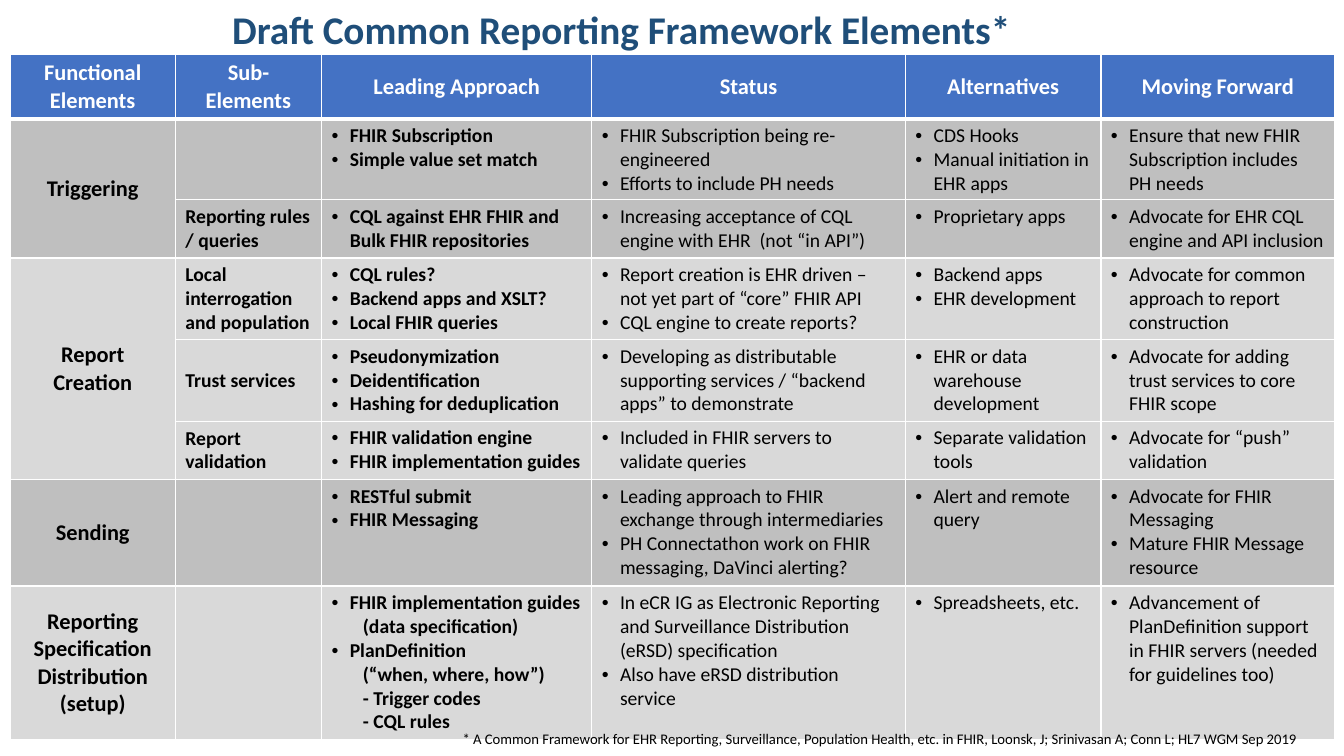
from lxml import etree
from pptx import Presentation
from pptx.dml.color import RGBColor
from pptx.enum.text import MSO_ANCHOR, PP_ALIGN
from pptx.oxml.ns import qn
from pptx.util import Inches, Pt

LEFT, MID, RIGHT = PP_ALIGN.LEFT, PP_ALIGN.CENTER, PP_ALIGN.RIGHT
TOP, CENTRE = MSO_ANCHOR.TOP, MSO_ANCHOR.MIDDLE
FONT = "Calibri"
HEX = {"title": "1F4E79", "head": "4472C4", "dark": "BFBFBF",
       "light": "D9D9D9", "white": "FFFFFF", "black": "000000"}

# Column widths and row heights, in percent of the slide
COLS = [12.3, 10.88, 20.11, 23.33, 14.55, 17.4]
ROWS = [8.53, 10.7, 7.7, 10.8, 10.8, 7.7, 14.1, 20.3]
HEADS = ["Functional Elements", "Sub-Elements", "Leading Approach",
         "Status", "Alternatives", "Moving Forward"]

# Each group: name, shade, rows. "|" parts paragraphs, ">" marks an indented
# line without a bullet.
GROUPS = [
    ("Triggering", "dark", [
        ["", "FHIR Subscription|Simple value set match",
         "FHIR Subscription being re-engineered|Efforts to include PH needs",
         "CDS Hooks|Manual initiation in EHR apps",
         "Ensure that new FHIR Subscription includes PH needs"],
        ["Reporting rules / queries",
         "CQL against EHR FHIR and Bulk FHIR repositories",
         "Increasing acceptance of CQL engine with EHR  (not “in API”)",
         "Proprietary apps",
         "Advocate for EHR CQL engine and API inclusion"]]),
    ("Report|Creation", "light", [
        ["Local interrogation and population",
         "CQL rules?|Backend apps and XSLT?|Local FHIR queries",
         "Report creation is EHR driven – not yet part of “core” FHIR API|"
         "CQL engine to create reports?",
         "Backend apps|EHR development",
         "Advocate for common approach to report construction"],
        ["Trust services",
         "Pseudonymization|Deidentification|Hashing for deduplication",
         "Developing as distributable supporting services / “backend apps” "
         "to demonstrate",
         "EHR or data warehouse development",
         "Advocate for adding trust services to core FHIR scope"],
        ["Report validation",
         "FHIR validation engine|FHIR implementation guides",
         "Included in FHIR servers to validate queries",
         "Separate validation tools",
         "Advocate for “push” validation"]]),
    ("Sending", "dark", [
        ["", "RESTful submit|FHIR Messaging",
         "Leading approach to FHIR exchange through intermediaries|"
         "PH Connectathon work on FHIR messaging, DaVinci alerting?",
         "Alert and remote query",
         "Advocate for FHIR Messaging|Mature FHIR Message resource"]]),
    ("Reporting|Specification|Distribution (setup)", "light", [
        ["", "FHIR implementation guides|>(data specification)|PlanDefinition|"
         ">(“when, where, how”)|>- Trigger codes|>- CQL rules",
         "In eCR IG as Electronic Reporting and Surveillance Distribution "
         "(eRSD) specification|Also have eRSD distribution service",
         "Spreadsheets, etc.",
         "Advancement of PlanDefinition support in FHIR servers "
         "(needed for guidelines too)"]]),
]


class Deck:
    def __init__(self):
        self.prs = Presentation()
        self.prs.slide_width = Inches(13.33)
        self.prs.slide_height = Inches(7.5)
        self.slide = self.prs.slides.add_slide(self.prs.slide_layouts[6])

    def wide(self, share):
        return round(self.prs.slide_width * share / 100)

    def high(self, share):
        return round(self.prs.slide_height * share / 100)

    def box(self, x, y, w, h):
        return self.wide(x), self.high(y), self.wide(w), self.high(h)

    def fill_text(self, frame, text, size, color, bold=False, align=LEFT,
                  bullet=False):
        for i, line in enumerate(text.split("|")):
            para = frame.paragraphs[0] if i == 0 else frame.add_paragraph()
            para.alignment = align
            if bullet:
                self.indent(para, line.startswith(">"))
            run = para.add_run()
            run.text = line.removeprefix(">")
            font = run.font
            font.name, font.size, font.bold = FONT, Pt(size), bold
            font.color.rgb = RGBColor.from_string(HEX[color])

    def indent(self, para, plain):
        """Hang a bullet, or push a plain line in below one."""
        props = para._p.get_or_add_pPr()
        props.set("marL", str(Inches(0.31 if plain else 0.18)))
        props.set("indent", str(0 if plain else Inches(-0.18)))
        if plain:
            etree.SubElement(props, qn("a:buNone"))
        else:
            etree.SubElement(props, qn("a:buFont")).set("typeface", "Arial")
            etree.SubElement(props, qn("a:buChar")).set("char", "•")

    def label(self, place, text, size, color, anchor=TOP, **style):
        frame = self.slide.shapes.add_textbox(*self.box(*place)).text_frame
        frame.word_wrap = True
        frame.vertical_anchor = anchor
        self.fill_text(frame, text, size, color, **style)
        return frame

    def grid(self, x, y, cols, rows):
        place = self.box(x, y, sum(cols), sum(rows))
        table = self.slide.shapes.add_table(len(rows), len(cols), *place).table
        for col, share in zip(table.columns, cols):
            col.width = self.wide(share)
        for row, share in zip(table.rows, rows):
            row.height = self.high(share)
        return table

    def paint(self, cell, fill, base=1):
        """Give a cell white borders, then its fill."""
        props = cell._tc.get_or_add_tcPr()
        for side, width in zip("LRTB", (1, 1, 1, base)):
            line = etree.SubElement(props, qn("a:ln" + side), w=str(Pt(width)))
            solid = etree.SubElement(line, qn("a:solidFill"))
            etree.SubElement(solid, qn("a:srgbClr"), val=HEX["white"])
        cell.fill.solid()
        cell.fill.fore_color.rgb = RGBColor.from_string(HEX[fill])

    def cell(self, cell, text, size, color="black", anchor=CENTRE, **style):
        cell.vertical_anchor = anchor
        if text:
            self.fill_text(cell.text_frame, text, size, color, **style)


def main():
    deck = Deck()
    title = deck.label((3.08, 0.27, 86.27, 8),
                       "Draft Common Reporting Framework Elements*", 28,
                       "title", CENTRE, bold=True, align=MID)
    title.paragraphs[0].line_spacing = 0.9

    table = deck.grid(0.75, 7.2, COLS, ROWS)
    for col, head in enumerate(HEADS):
        deck.paint(table.cell(0, col), "head", 3)
        deck.cell(table.cell(0, col), head, 16, "white", bold=True, align=MID)

    top = 1
    for name, shade, rows in GROUPS:
        for r, row in enumerate(rows, top):
            deck.paint(table.cell(r, 0), shade)
            for c, text in enumerate(row, 1):
                item = table.cell(r, c)
                deck.paint(item, shade)
                deck.cell(item, text, 14, anchor=CENTRE if c == 1 else TOP,
                          bold=c < 3, bullet=c > 1)
        first = table.cell(top, 0)
        if len(rows) > 1:
            first.merge(table.cell(top + len(rows) - 1, 0))
        deck.cell(first, name, 16, bold=True, align=MID)
        top += len(rows)

    deck.label((13.8, 95.87, 83.72, 3.87),
               "* A Common Framework for EHR Reporting, Surveillance, "
               "Population Health, etc. in FHIR, Loonsk, J; Srinivasan A; "
               "Conn L; HL7 WGM Sep 2019 ", 10.5, "black", align=RIGHT)
    deck.prs.save("out.pptx")


if __name__ == "__main__":
    main()
